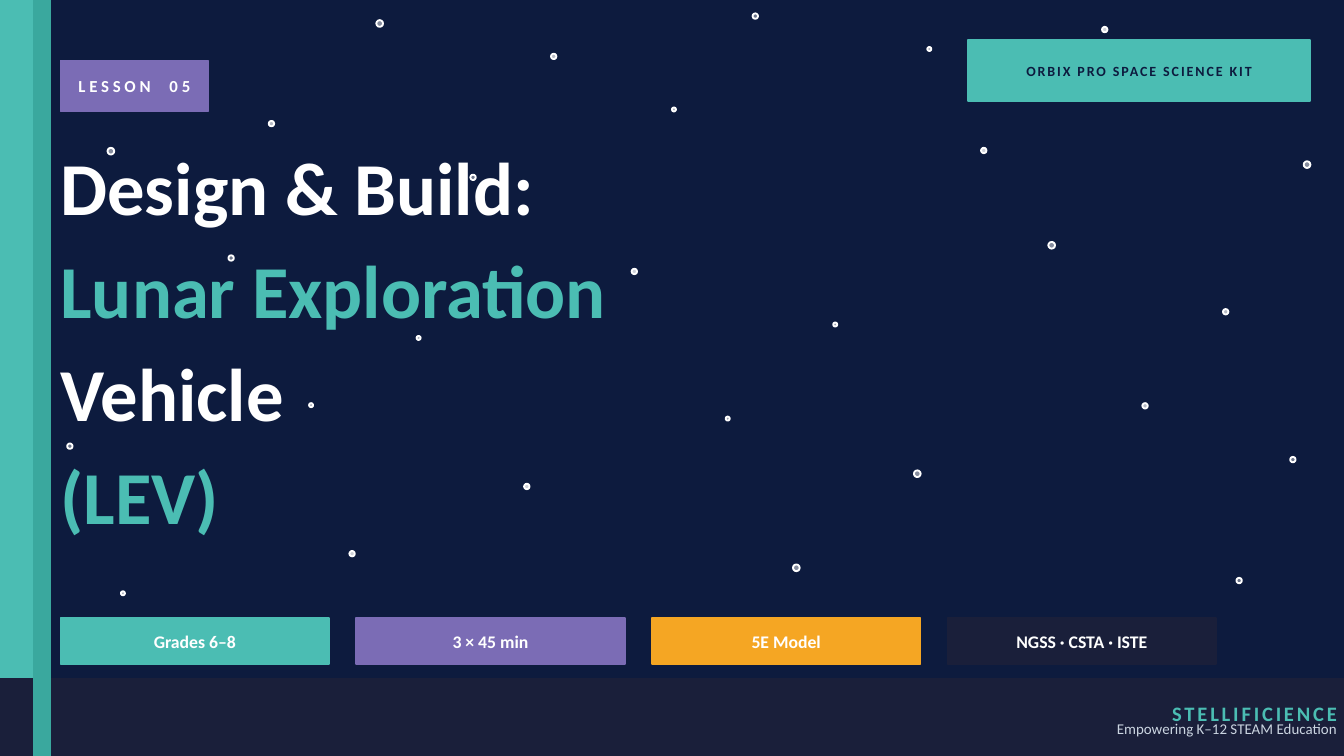
"""Build the opening slide of the lunar vehicle lesson."""
from lxml import etree
from pptx import Presentation
from pptx.dml.color import RGBColor
from pptx.enum import shapes, text
from pptx.oxml import ns
from pptx.util import Inches, Pt

NIGHT = RGBColor(0x0D, 0x1B, 0x3E)
INK = RGBColor(0x1A, 0x1F, 0x3A)
TEAL = RGBColor(0x4B, 0xBD, 0xB3)
DEEP_TEAL = RGBColor(0x3A, 0xA8, 0x9E)
PURPLE = RGBColor(0x7B, 0x6C, 0xB5)
AMBER = RGBColor(0xF5, 0xA6, 0x23)
MIST = RGBColor(0xCB, 0xD5, 0xE1)
WHITE = RGBColor(0xFF, 0xFF, 0xFF)

WIDTH = 10
HEIGHT = WIDTH * 9 / 16
MARGIN = 0.45
FOOTER_TOP = 5.05
STAR_SIZES = {40: 0.04, 50: 0.05, 60: 0.03, 65: 0.03, 70: 0.04, 80: 0.04}
STARS_BY_OPACITY = {
    40: [(5.6, 0.1), (3.5, 1.3), (1.7, 1.9), (0.5, 3.3), (9.6, 3.4), (9.2, 4.3)],
    50: [(2.8, 0.15), (0.8, 1.1), (9.7, 1.2), (7.8, 1.8), (6.8, 3.5), (5.9, 4.2)],
    60: [(6.2, 2.4), (5.4, 3.1)],
    65: [(6.9, 0.35), (5, 0.8), (3.1, 2.5), (2.3, 3), (0.9, 4.4)],
    70: [(4.1, 0.4), (2, 0.9), (9.1, 2.3), (8.5, 3), (7.4, 4.6)],
    80: [(8.2, 0.2), (7.3, 1.1), (4.7, 2), (3.9, 3.6), (2.6, 4.1)],
}
TITLE_LINES = [("Design & Build:", WHITE), ("Lunar Exploration", TEAL),
               ("Vehicle", WHITE), ("(LEV)", TEAL)]
FACTS = [("Grades 6–8", TEAL), ("3 × 45 min", PURPLE),
         ("5E Model", AMBER), ("NGSS · CSTA · ISTE", INK)]


def inches(*lengths):
    """Convert numbers to lengths in inches."""
    return [Inches(length) for length in lengths]


def prepare_frame(frame, anchor=text.MSO_ANCHOR.MIDDLE):
    """Remove the insets and fix the wrapping and anchor of a text frame."""
    frame.margin_left = frame.margin_right = frame.margin_top = frame.margin_bottom = 0
    frame.word_wrap = True
    frame.auto_size = text.MSO_AUTO_SIZE.NONE
    frame.vertical_anchor = anchor


def write(paragraph, words, *, size, color, bold=True, spacing=0,
          align=text.PP_ALIGN.CENTER, line_spacing=None):
    """Write one formatted run into a paragraph."""
    paragraph.alignment = align
    paragraph.line_spacing = line_spacing
    run = paragraph.add_run()
    run.text = words
    run.font.name = "Calibri"
    run.font.size = Pt(size)
    run.font.bold = bold
    run.font.color.rgb = color
    if spacing:
        run.font._element.set("spc", str(int(spacing * 100)))


def add_block(slide, box, color, kind=shapes.MSO_SHAPE.RECTANGLE):
    """Add a flat shape filled and outlined in one colour."""
    block = slide.shapes.add_shape(kind, *inches(*box))
    block.shadow.inherit = False
    block.fill.solid()
    block.fill.fore_color.rgb = color
    block.line.color.rgb = color
    block.line.width = Pt(1)
    return block


def add_star(slide, x, y, opacity):
    """Add a small translucent star."""
    size = STAR_SIZES[opacity]
    star = add_block(slide, (x, y, size, size), WHITE, shapes.MSO_SHAPE.OVAL)
    color = star._element.spPr.find(ns.qn("a:solidFill")).find(ns.qn("a:srgbClr"))
    etree.SubElement(color, ns.qn("a:alpha")).set("val", str(opacity * 1000))


def add_badge(slide, box, fill, words, **style):
    """Add a block with a centred label."""
    badge = add_block(slide, box, fill)
    prepare_frame(badge.text_frame)
    write(badge.text_frame.paragraphs[0], words, **style)


def add_caption(slide, box, words, **style):
    """Add a right-aligned line of text."""
    frame = slide.shapes.add_textbox(*inches(*box)).text_frame
    prepare_frame(frame)
    write(frame.paragraphs[0], words, align=text.PP_ALIGN.RIGHT, **style)


def add_title(slide):
    """Fill the title placeholder and bring it in front of the stars."""
    title = slide.shapes.title
    title.left, title.top, title.width, title.height = inches(MARGIN, 0.95, 6.3, 3.6)
    frame = title.text_frame
    prepare_frame(frame, text.MSO_ANCHOR.TOP)
    for index, (words, color) in enumerate(TITLE_LINES):
        paragraph = frame.add_paragraph() if index else frame.paragraphs[0]
        write(paragraph, words, size=40, color=color,
              align=text.PP_ALIGN.LEFT, line_spacing=1.15)
    slide.shapes._spTree.append(title._element)


def main():
    """Compose the slide and save the deck."""
    deck = Presentation()
    deck.slide_width, deck.slide_height = inches(WIDTH, HEIGHT)
    slide = deck.slides.add_slide(deck.slide_layouts[5])
    slide.background.fill.solid()
    slide.background.fill.fore_color.rgb = NIGHT

    for opacity, places in STARS_BY_OPACITY.items():
        for x, y in places:
            add_star(slide, x, y, opacity)

    add_block(slide, (0, 0, 0.25, HEIGHT), TEAL)
    add_block(slide, (0, FOOTER_TOP, WIDTH, HEIGHT - FOOTER_TOP), INK)
    add_block(slide, (0.25, 0, 0.12, HEIGHT), DEEP_TEAL)

    add_badge(slide, (7.2, 0.3, 2.55, 0.45), TEAL, "ORBIX PRO SPACE SCIENCE KIT",
              size=7.5, color=NIGHT, spacing=1)
    add_badge(slide, (MARGIN, 0.45, 1.1, 0.38), PURPLE, "LESSON  05",
              size=9, color=WHITE, spacing=2)
    add_title(slide)
    for column, (words, fill) in enumerate(FACTS):
        add_badge(slide, (MARGIN + 2.2 * column, 4.6, 2, 0.34), fill, words,
                  size=9.5, color=WHITE)

    add_caption(slide, (7.5, 5.1, 2.45, 0.42), "STELLIFICIENCE",
                size=11, color=TEAL, spacing=1.5)
    add_caption(slide, (5.5, 5.28, 4.45, 0.28), "Empowering K–12 STEAM Education",
                size=8, color=MIST, bold=False)
    deck.save("out.pptx")


if __name__ == "__main__":
    main()
